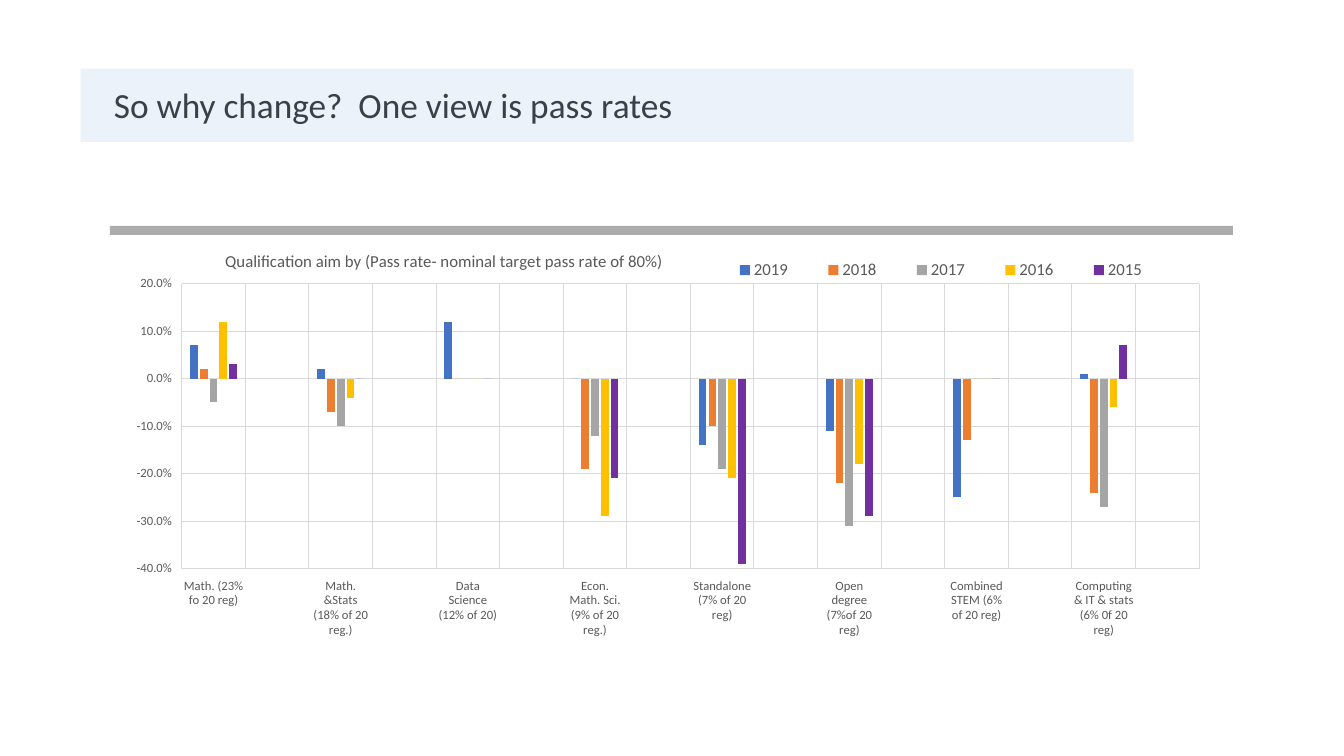
from pptx import Presentation
from pptx.chart.data import CategoryChartData
from pptx.dml.color import RGBColor
from pptx.enum.chart import (XL_CHART_TYPE as ChartType, XL_LEGEND_POSITION as LegendPos,
                             XL_TICK_LABEL_POSITION as LabelPos, XL_TICK_MARK as TickMark)
from pptx.enum.shapes import MSO_SHAPE as Shape
from pptx.enum.text import MSO_ANCHOR as Anchor
from pptx.oxml import parse_xml
from pptx.oxml.ns import nsdecls, qn
from pptx.util import Cm, Pt

BLACK = RGBColor(0x00, 0x00, 0x00)
GREY = RGBColor(0x80, 0x80, 0x80)
PALE_BLUE = RGBColor(0xBD, 0xD7, 0xEE)
LABEL = RGBColor(0x59, 0x59, 0x59)
GRID = RGBColor(0xD9, 0xD9, 0xD9)
BLUE = RGBColor(0x44, 0x72, 0xC4)
ORANGE = RGBColor(0xED, 0x7D, 0x31)
SILVER = RGBColor(0xA5, 0xA5, 0xA5)
GOLD = RGBColor(0xFF, 0xC0, 0x00)
PURPLE = RGBColor(0x70, 0x30, 0xA0)

AIMS = ["Math. (23% fo 20 reg)", "Math. &Stats (18% of 20 reg.)", "Data Science (12% of 20)",
        "Econ. Math. Sci. (9% of 20 reg.)", "Standalone (7% of 20 reg)",
        "Open degree (7%of 20 reg)", "Combined STEM (6% of 20 reg)",
        "Computing & IT & stats (6% 0f 20 reg)"]
YEARS = [
    ("2019", BLUE, [0.07, 0.02, 0.12, 0, -0.14, -0.11, -0.25, 0.01]),
    ("2018", ORANGE, [0.02, -0.07, 0, -0.19, -0.10, -0.22, -0.13, -0.24]),
    ("2017", SILVER, [-0.05, -0.10, 0, -0.12, -0.19, -0.31, 0, -0.27]),
    ("2016", GOLD, [0.12, -0.04, 0, -0.29, -0.21, -0.18, 0, -0.06]),
    ("2015", PURPLE, [0.03, 0, 0, -0.21, -0.39, -0.29, 0, 0.07]),
]


def spaced(items, gap):
    return [cell for item in items for cell in (item, gap)]


class SlideBuilder:
    """Holds the style and the current slide, with a method per element."""

    font = "Calibri"

    def __init__(self, prs):
        self.s = prs.slides.add_slide(prs.slide_layouts[6])

    def style(self, font, size, color):
        font.name, font.size, font.bold = self.font, Pt(size), False
        font.color.rgb = color

    def text(self, x, y, w, h, text, size):
        tf = self.s.shapes.add_textbox(Cm(x), Cm(y), Cm(w), Cm(h)).text_frame
        tf.word_wrap = True
        tf.vertical_anchor = Anchor.MIDDLE
        p = tf.paragraphs[0]
        p.text = text
        p.line_spacing = 0.9
        self.style(p.runs[0].font, size, BLACK)

    def bar(self, x, y, w, h, color, opacity):
        sp = self.s.shapes.add_shape(Shape.RECTANGLE, Cm(x), Cm(y), Cm(w), Cm(h))
        sp.shadow.inherit = False
        sp.line.fill.background()
        sp.fill.solid()
        sp.fill.fore_color.rgb = color
        clr = sp.element.spPr.find(f".//{qn('a:srgbClr')}")
        clr.append(parse_xml(f'<a:alpha {nsdecls("a")} val="{opacity * 1000}"/>'))

    def place(self, chart, tag, index, target="", **box):
        node = chart.element.find(f".//{qn(tag)}")
        old = node.find(qn("c:layout"))
        if old is not None:
            node.remove(old)
        inner = f'<c:layoutTarget val="{target}"/>' if target else ""
        inner += "".join(f'<c:{side}Mode val="edge"/>' for side in "xy")
        inner += "".join(f'<c:{side} val="{value}"/>' for side, value in box.items())
        node.insert(index, parse_xml(f'<c:layout {nsdecls("c")}><c:manualLayout>{inner}'
                                     '</c:manualLayout></c:layout>'))

    def axis(self, axis):
        axis.major_tick_mark = axis.minor_tick_mark = TickMark.NONE
        axis.tick_label_position = LabelPos.LOW
        axis.has_major_gridlines = True
        for line in (axis.format.line, axis.major_gridlines.format.line):
            line.color.rgb = GRID
            line.width = Pt(0.75)
        self.style(axis.tick_labels.font, 9, LABEL)

    def chart(self, x, y, w, h, title):
        data = CategoryChartData(number_format="0.0%")
        data.categories = spaced(AIMS, "")
        for year, _, rates in YEARS:
            data.add_series(year, spaced(rates, None))
        chart = self.s.shapes.add_chart(ChartType.COLUMN_CLUSTERED, Cm(x), Cm(y),
                                        Cm(w), Cm(h), data).chart
        self.style(chart.font, 10, BLACK)
        plot = chart.plots[0]
        plot.vary_by_categories = False
        plot.gap_width, plot.overlap = 219, -27
        for series, (_, color, _) in zip(plot.series, YEARS):
            series.invert_if_negative = False
            series.format.fill.solid()
            series.format.fill.fore_color.rgb = color
        self.axis(chart.category_axis)
        values = chart.value_axis
        self.axis(values)
        values.format.line.fill.background()
        values.minimum_scale, values.maximum_scale, values.major_unit = -0.4, 0.2, 0.1
        values.tick_labels.number_format = "0.0%"
        values.tick_labels.number_format_is_linked = False

        chart.has_title = True
        p = chart.chart_title.text_frame.paragraphs[0]
        p.text = title
        self.style(p.runs[0].font, 12, LABEL)
        chart.has_legend = True
        chart.legend.position = LegendPos.BOTTOM
        chart.legend.include_in_layout = False
        self.style(chart.legend.font, 12, LABEL)
        self.place(chart, "c:title", 1, x=0.1, y=0.03)
        self.place(chart, "c:legend", 1, x=0.53, y=0.05, w=0.42, h=0.07)
        self.place(chart, "c:plotArea", 0, "inner", x=0.064, y=0.117, w=0.906, h=0.667)


def main():
    prs = Presentation()
    prs.slide_width, prs.slide_height = Cm(33.87), Cm(19.05)
    slide = SlideBuilder(prs)
    slide.text(2.62, 1.78, 25.4, 1.85, "So why change?  One view is pass rates", 25.2)
    slide.bar(2.77, 5.69, 28.3, 0.23, GREY, 65)
    slide.chart(2.77, 5.89, 28.3, 10.77,
                "Qualification aim by (Pass rate- nominal target pass rate of 80%)")
    slide.bar(2.03, 1.73, 26.54, 1.85, PALE_BLUE, 30)
    prs.save("out.pptx")


if __name__ == "__main__":
    main()
